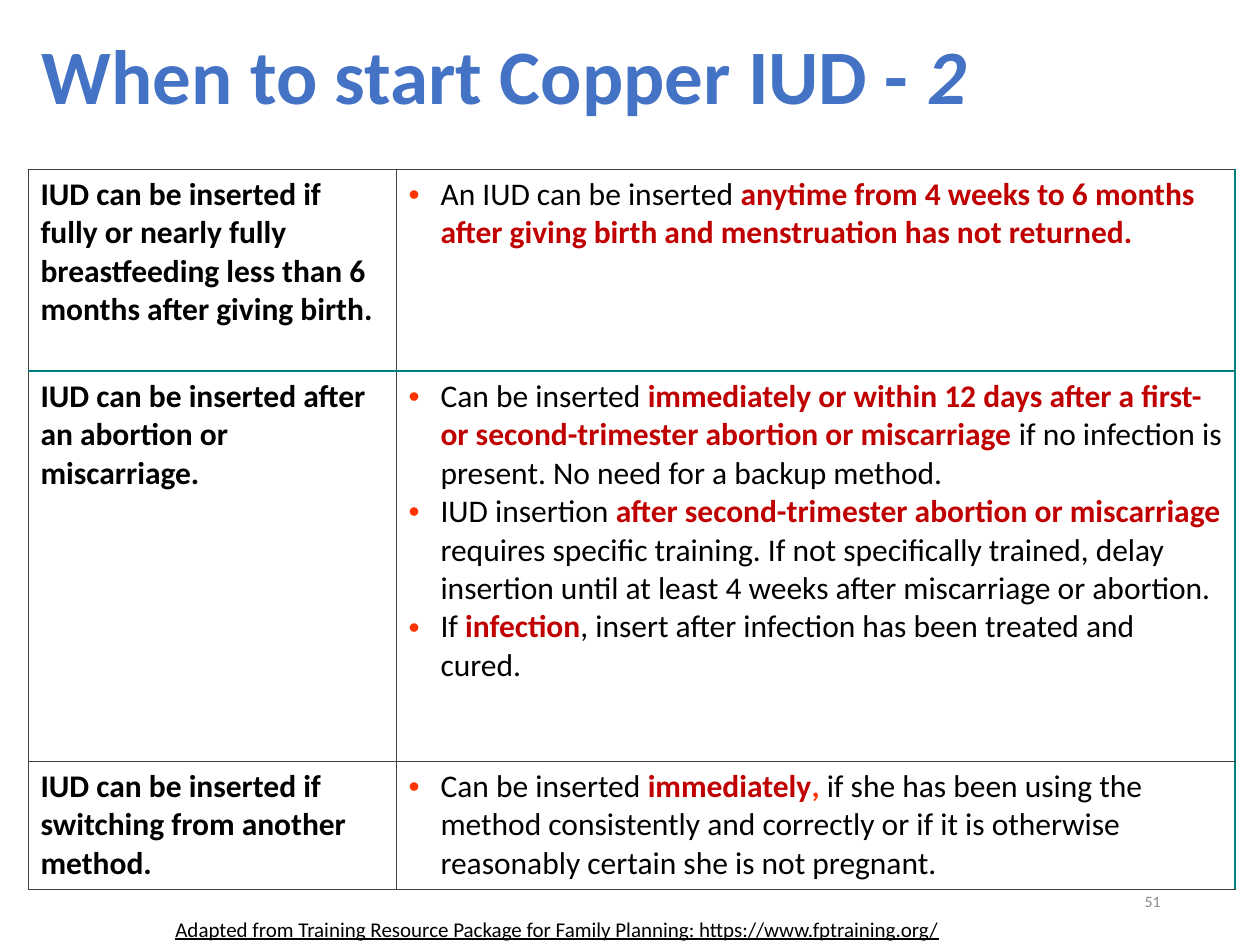
"""Build the slide on when to start a copper IUD."""
from dataclasses import dataclass

from lxml import etree
from pptx import Presentation
from pptx.dml.color import RGBColor
from pptx.enum.text import MSO_ANCHOR, MSO_AUTO_SIZE, PP_ALIGN
from pptx.oxml.ns import qn
from pptx.util import Pt

LEFT, RIGHT = PP_ALIGN.LEFT, PP_ALIGN.RIGHT
TOP, MIDDLE = MSO_ANCHOR.TOP, MSO_ANCHOR.MIDDLE
NO_FIT = MSO_AUTO_SIZE.NONE
EMU_PER_PX = 914400 / 126


@dataclass(frozen=True)
class Theme:
    """Fonts, colours and type sizes of the slide."""
    font: str = "Calibri"
    title: str = "4472C4"
    text: str = "000000"
    key: str = "C00000"
    bullet: str = "FF3300"
    number: str = "8C8C8C"
    accent_line: str = "008080"
    thin_line: str = "404040"
    title_size: float = 44
    body_size: float = 18
    source_size: float = 12
    number_size: float = 9


THEME = Theme()


@dataclass(frozen=True)
class Run:
    """A stretch of text in one format."""
    text: str
    color: str = THEME.text
    size: float = THEME.body_size
    bold: bool = False
    italic: bool = False
    underline: bool = False


@dataclass(frozen=True)
class Box:
    """A rectangle in px."""
    x: int
    y: int
    w: int
    h: int


@dataclass(frozen=True)
class Row:
    """A table row: a situation and its bulleted advice."""
    height: int
    heading: str
    bullets: tuple[tuple[Run, ...], ...]
    space_before: int = 0


def key(text: str) -> Run:
    """Return a highlighted run."""
    return Run(text, THEME.key, bold=True)


TITLE = (Run("When to start Copper IUD - ", THEME.title, THEME.title_size, True),
         Run("2", THEME.title, THEME.title_size, True, True))
SOURCE = Run("Adapted from Training Resource Package for Family Planning: "
             "https://www.fptraining.org/", size=THEME.source_size, underline=True)
NUMBER = Run("51", THEME.number, THEME.number_size)
COLUMNS = (368, 839)
ROWS = (
    Row(202, "IUD can be inserted if fully or nearly fully breastfeeding "
        "less than 6 months after giving birth.", (
            (Run("An IUD can be inserted "),
             key("anytime from 4 weeks to 6 months after giving birth and "
                 "menstruation has not returned.")),), 12),
    Row(390, "IUD can be inserted after an abortion or miscarriage.", (
        (Run("Can be inserted "),
         key("immediately or within 12 days after a first- or second-trimester "
             "abortion or miscarriage "),
         Run("if no infection is present. No need for a backup method.")),
        (Run("IUD insertion "),
         key("after second-trimester abortion or miscarriage "),
         Run("requires specific training. If not specifically trained, delay "
             "insertion until at least 4 weeks after miscarriage or abortion.")),
        (Run("If "), key("infection"),
         Run(", insert after infection has been treated and cured.")))),
    Row(128, "IUD can be inserted if switching from another method.", (
        (Run("Can be inserted "), key("immediately"),
         Run(", ", THEME.bullet, bold=True),
         Run("if she has been using the method consistently and correctly or if "
             "it is otherwise reasonably certain she is not pregnant.")),)),
)


def px(n: int) -> int:
    """Convert px to EMU."""
    return round(n * EMU_PER_PX)


def place(box: Box) -> dict[str, int]:
    """Return the position and size of a box in EMU."""
    return dict(left=px(box.x), top=px(box.y), width=px(box.w), height=px(box.h))


def apply(obj, **values) -> None:
    """Set each attribute of an object."""
    for name, value in values.items():
        setattr(obj, name, value)


def write(p, runs: tuple[Run, ...]) -> None:
    """Add formatted runs to a paragraph."""
    for run in runs:
        r = p.add_run()
        r.text = run.text
        apply(r.font, name=THEME.font, size=Pt(run.size), bold=run.bold,
              italic=run.italic, underline=run.underline)
        r.font.color.rgb = RGBColor.from_string(run.color)


def add_text(s, box: Box, run: Run, align=LEFT, anchor=TOP) -> None:
    """Add a one-line text box."""
    tf = s.shapes.add_textbox(**place(box)).text_frame
    apply(tf, word_wrap=True, vertical_anchor=anchor)
    p = tf.paragraphs[0]
    p.alignment = align
    write(p, (run,))


def add_title(s, box: Box, runs: tuple[Run, ...]) -> None:
    """Move and fill the title placeholder."""
    sp = s.shapes.title
    apply(sp, **place(box))
    apply(sp.text_frame, word_wrap=True, auto_size=NO_FIT, vertical_anchor=MIDDLE)
    p = sp.text_frame.paragraphs[0]
    apply(p, alignment=LEFT, line_spacing=0.9)
    write(p, runs)


def set_bullet(p) -> None:
    """Give a paragraph a coloured bullet with a hanging indent."""
    pPr = p._p.get_or_add_pPr()
    pPr.set("marL", str(px(32)))
    pPr.set("indent", str(-px(32)))
    color = etree.SubElement(pPr, qn("a:buClr"))
    etree.SubElement(color, qn("a:srgbClr"), val=THEME.bullet)
    etree.SubElement(pPr, qn("a:buFont"), typeface="Arial")
    etree.SubElement(pPr, qn("a:buChar"), char="•")


def set_borders(cell, accents: set[str]) -> None:
    """Draw the four cell borders, with the named sides accented."""
    tcPr = cell._tc.get_or_add_tcPr()
    for side in "LRTB":
        color, width = ((THEME.accent_line, 1) if side in accents
                        else (THEME.thin_line, 0.5))
        ln = etree.SubElement(tcPr, qn(f"a:ln{side}"), w=str(Pt(width)))
        fill = etree.SubElement(ln, qn("a:solidFill"))
        etree.SubElement(fill, qn("a:srgbClr"), val=color)


def add_advice_table(s, x: int, y: int) -> None:
    """Add the table of situations and advice."""
    box = Box(x, y, sum(COLUMNS), sum(row.height for row in ROWS))
    table = s.shapes.add_table(len(ROWS), len(COLUMNS), **place(box)).table
    apply(table, first_row=False, horz_banding=False)
    for column, width in zip(table.columns, COLUMNS):
        column.width = px(width)
    for i, row in enumerate(ROWS):
        table.rows[i].height = px(row.height)
        heading, advice = table.cell(i, 0), table.cell(i, 1)
        divider = {0: {"B"}, 1: {"T"}}.get(i, set())
        for cell, accents in ((heading, divider), (advice, divider | {"R"})):
            set_borders(cell, accents)
            cell.fill.background()
        write(heading.text_frame.paragraphs[0], (Run(row.heading, bold=True),))
        tf = advice.text_frame
        for n, runs in enumerate(row.bullets):
            p = tf.add_paragraph() if n else tf.paragraphs[0]
            p.space_before = Pt(row.space_before)
            set_bullet(p)
            write(p, runs)


def main() -> None:
    """Build and save the slide."""
    prs = Presentation()
    apply(prs, slide_width=px(1260), slide_height=px(945))
    s = prs.slides.add_slide(prs.slide_layouts[5])
    add_advice_table(s, 28, 169)
    add_text(s, Box(890, 876, 283, 50), NUMBER, RIGHT, MIDDLE)
    add_text(s, Box(163, 910, 874, 34), SOURCE)
    add_title(s, Box(29, 26, 1134, 107), TITLE)
    prs.save("out.pptx")


if __name__ == "__main__":
    main()
